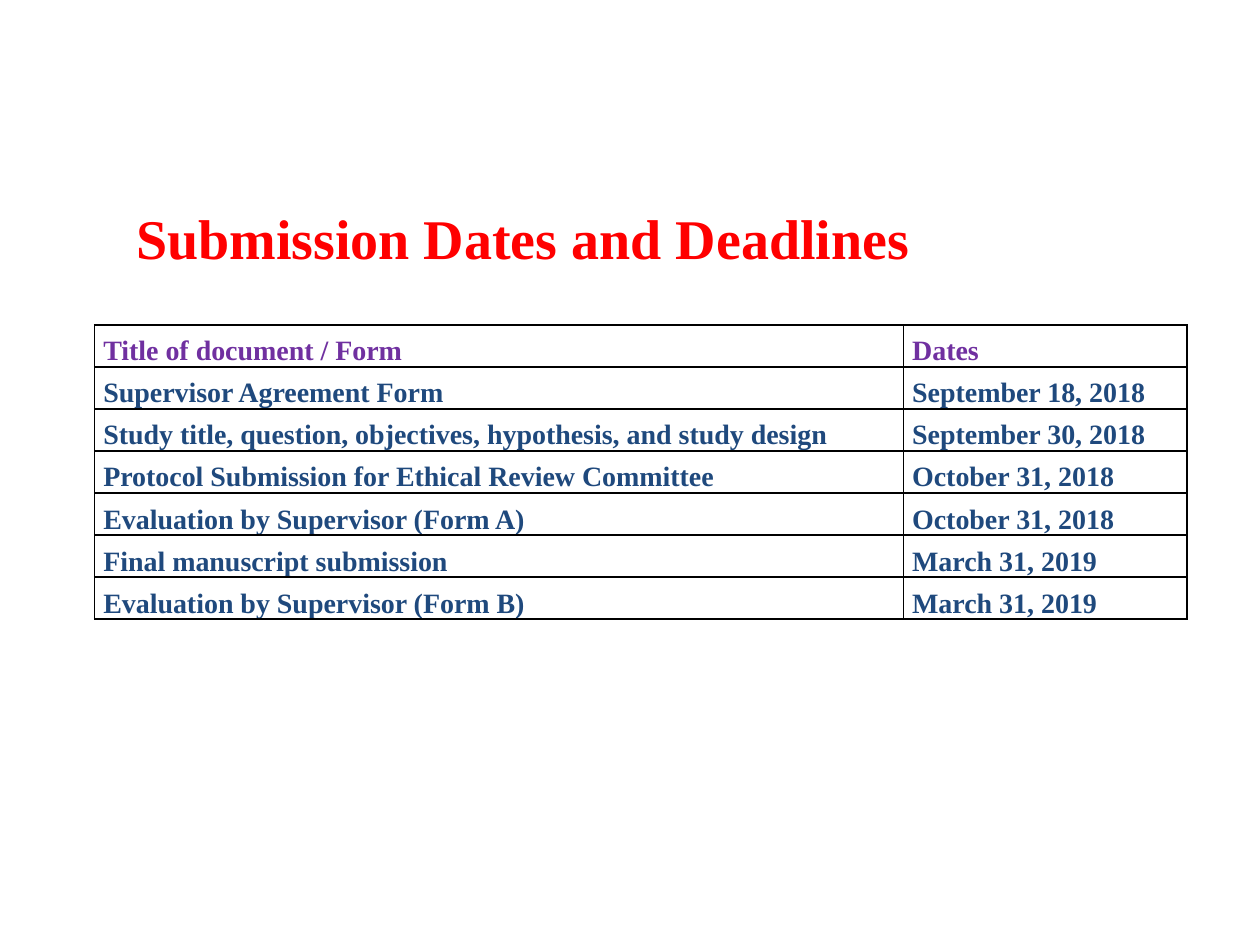
from lxml import etree
from pptx import Presentation
from pptx.dml.color import RGBColor
from pptx.enum.text import MSO_ANCHOR
from pptx.oxml.ns import qn
from pptx.util import Inches, Pt

MIDDLE = MSO_ANCHOR.MIDDLE
TOP = MSO_ANCHOR.TOP

DEADLINES = [
    ("Title of document / Form", "Dates"),
    ("Supervisor Agreement Form", "September 18, 2018"),
    ("Study title, question, objectives, hypothesis, and study design", "September 30, 2018"),
    ("Protocol Submission for Ethical Review Committee", "October 31, 2018"),
    ("Evaluation by Supervisor (Form A)", "October 31, 2018"),
    ("Final manuscript submission", "March 31, 2019"),
    ("Evaluation by Supervisor (Form B)", "March 31, 2019"),
]


def rgb(value):
    return RGBColor.from_string(value)


class SlideBuilder:
    font = "Times New Roman"
    title_color = "FF0000"
    header_color = "7030A0"
    body_color = "1F497D"
    border_color = "000000"

    def __init__(self, slide):
        self.slide = slide

    def style(self, paragraph, size, color):
        font = paragraph.font
        font.name, font.size, font.bold = self.font, Pt(size), True
        font.color.rgb = rgb(color)

    def title(self, text, left, top, width, height):
        box = self.slide.shapes.add_textbox(
            Inches(left), Inches(top), Inches(width), Inches(height))
        frame = box.text_frame
        frame.word_wrap = True
        frame.vertical_anchor = MIDDLE
        frame.margin_left = frame.margin_right = 0
        frame.margin_top, frame.margin_bottom = Inches(0.17), Inches(0.32)
        frame.text = text
        self.style(frame.paragraphs[0], 32, self.title_color)

    def border(self, cell):
        properties = cell._tc.get_or_add_tcPr()
        for position, side in enumerate(("lnL", "lnR", "lnT", "lnB")):
            line = etree.Element(qn(f"a:{side}"), w=str(Pt(1)))
            fill = etree.SubElement(line, qn("a:solidFill"))
            etree.SubElement(fill, qn("a:srgbClr"), val=self.border_color)
            properties.insert(position, line)

    def cell(self, cell, text, color):
        cell.fill.background()
        cell.margin_left = cell.margin_right = Inches(0.07)
        cell.margin_top = cell.margin_bottom = 0
        cell.vertical_anchor = TOP
        cell.text = text
        paragraph = cell.text_frame.paragraphs[0]
        paragraph.line_spacing = 1.35
        self.style(paragraph, 16, color)
        self.border(cell)

    def table(self, rows, left, top, widths, row_height):
        table = self.slide.shapes.add_table(
            len(rows), len(widths), Inches(left), Inches(top),
            Inches(sum(widths)), Inches(row_height * len(rows))).table
        table.horz_banding = False
        for column, width in zip(table.columns, widths):
            column.width = Inches(width)
        for r, row in enumerate(rows):
            color = self.body_color if r else self.header_color
            for c, text in enumerate(row):
                self.cell(table.cell(r, c), text, color)


def main():
    deck = Presentation()
    deck.slide_width, deck.slide_height = Inches(10), Inches(7.5)
    builder = SlideBuilder(deck.slides.add_slide(deck.slide_layouts[6]))

    # Deadlines table
    builder.table(DEADLINES, 0.75, 2.58, (6.42, 2.25), 0.33)

    # Heading
    builder.title("Submission Dates and Deadlines", 1.08, 1.43, 8.42, 1.05)

    deck.save("out.pptx")


if __name__ == "__main__":
    main()
